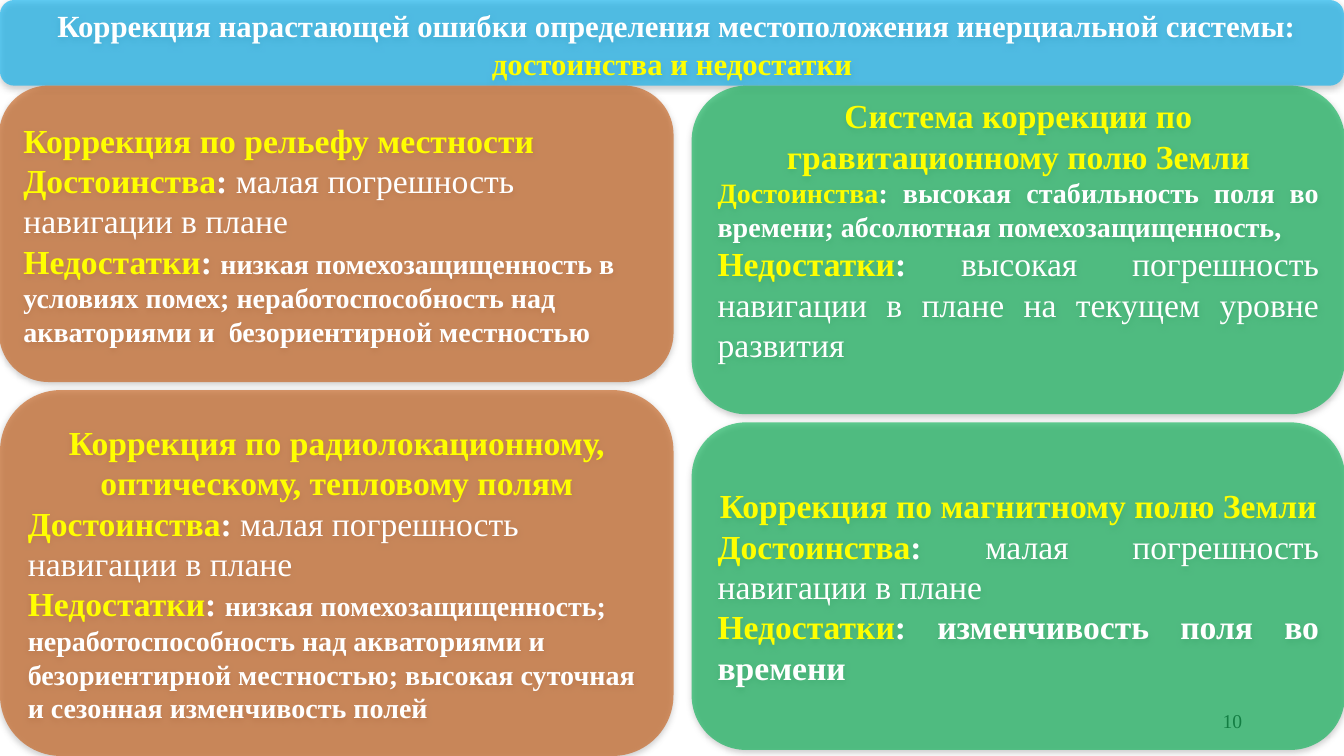
from lxml import etree
from pptx import Presentation
from pptx.dml.color import RGBColor
from pptx.enum.shapes import MSO_SHAPE
from pptx.enum.text import MSO_ANCHOR, PP_ALIGN
from pptx.oxml.ns import qn
from pptx.util import Inches, Pt

ROUNDED = MSO_SHAPE.ROUNDED_RECTANGLE
MIDDLE = MSO_ANCHOR.MIDDLE
LEFT, CENTER, RIGHT = PP_ALIGN.LEFT, PP_ALIGN.CENTER, PP_ALIGN.RIGHT
JUSTIFY = PP_ALIGN.JUSTIFY

WHITE = RGBColor(0xFF, 0xFF, 0xFF)
BLACK = RGBColor(0x00, 0x00, 0x00)
YELLOW = RGBColor(0xFF, 0xFF, 0x00)
BLUE = RGBColor(0x00, 0xB0, 0xF0)
ORANGE = RGBColor(0xC5, 0x5A, 0x11)
GREEN = RGBColor(0x00, 0xB0, 0x50)
SHADOW_GRAY = RGBColor(0x80, 0x80, 0x80)

PROS, CONS = "Достоинства", "Недостатки"
LOW_ERROR = "малая погрешность навигации в плане"


class SlideBuilder:
    """Holds the style and the current slide."""

    font = "Times New Roman"
    fill_alpha = 61
    shadow_alpha = 63

    def __init__(self, prs):
        self.slide = prs.slides.add_slide(prs.slide_layouts[6])

    def set_alpha(self, color, percent):
        etree.SubElement(color, qn("a:alpha")).set("val", str(percent * 1000))

    def add_shadow(self, s):
        s.shadow.inherit = False
        effects = s._element.spPr.find(qn("a:effectLst"))
        shadow = etree.SubElement(effects, qn("a:outerShdw"), {
            "blurRad": str(Pt(4.5)), "dist": str(Pt(1.5)),
            "dir": "5400000", "algn": "ctr", "rotWithShape": "0"})
        color = etree.SubElement(shadow, qn("a:srgbClr"), val=str(SHADOW_GRAY))
        self.set_alpha(color, self.shadow_alpha)

    def add_text(self, tf, paragraphs):
        """Each paragraph is (alignment, [(text, size, color, bold), ...])."""
        tf.word_wrap = True
        tf.vertical_anchor = MIDDLE
        for i, (align, runs) in enumerate(paragraphs):
            p = tf.add_paragraph() if i else tf.paragraphs[0]
            p.alignment = align
            for text, size, color, bold in runs:
                r = p.add_run()
                r.text = text
                r.font.name = self.font
                r.font.size = Pt(size)
                r.font.bold = bold
                r.font.color.rgb = color

    def panel(self, x, y, w, h, color, paragraphs):
        s = self.slide.shapes.add_shape(
            ROUNDED, Inches(x), Inches(y), Inches(w), Inches(h))
        s.fill.solid()
        s.fill.fore_color.rgb = color
        self.set_alpha(s._element.spPr.find(".//" + qn("a:srgbClr")),
                       self.fill_alpha)
        s.line.fill.background()
        self.add_shadow(s)
        self.add_text(s.text_frame, paragraphs)
        return s

    def label(self, x, y, w, h, paragraphs):
        s = self.slide.shapes.add_textbox(
            Inches(x), Inches(y), Inches(w), Inches(h))
        self.add_text(s.text_frame, paragraphs)


def heading(text, align=CENTER):
    return align, [(text, 24, YELLOW, True)]


def point(align, term, text, size=24, bold=False, term_size=24):
    """A yellow term, a white colon and the white text after it."""
    return align, [(term, term_size, YELLOW, True),
                   (": ", term_size, WHITE, True),
                   (text, size, WHITE, bold)]


def main():
    prs = Presentation()
    prs.slide_width, prs.slide_height = Inches(13.33), Inches(7.5)
    b = SlideBuilder(prs)

    # Title bar
    b.panel(0, 0, 13.33, 0.85, BLUE, [(CENTER, [
        (" ", 24, WHITE, True),
        ("Коррекция нарастающей ошибки определения местоположения "
         "инерциальной системы: ", 22, WHITE, True),
        ("достоинства и недостатки", 22, YELLOW, True)])])

    # Terrain correction
    b.panel(-0.01, 0.85, 6.69, 2.94, ORANGE, [
        heading("Коррекция по рельефу местности", JUSTIFY),
        point(LEFT, PROS, LOW_ERROR),
        point(LEFT, CONS, "низкая помехозащищенность в условиях помех; "
              "неработоспособность над акваториями и  безориентирной "
              "местностью", 20, True)])

    # Page number, seen through the green panel
    b.label(9.42, 6.95, 3, 0.4, [(RIGHT, [("10", 14, BLACK, False)])])

    # Gravity field correction, text raised above the middle
    gravity = b.panel(6.86, 0.85, 6.48, 3.26, GREEN, [
        heading("Система коррекции по гравитационному полю Земли"),
        point(JUSTIFY, PROS, "высокая стабильность поля во времени; "
              "абсолютная помехозащищенность,", 20, True, 20),
        point(JUSTIFY, CONS, "высокая погрешность навигации в плане "
              "на текущем уровне развития")])
    gravity.text_frame.margin_bottom = Inches(0.45)

    # Radar, optical and thermal field correction
    b.panel(0, 3.87, 6.68, 3.63, ORANGE, [
        heading("Коррекция по радиолокационному, оптическому, "
                "тепловому полям"),
        point(LEFT, PROS, LOW_ERROR),
        point(LEFT, CONS, "низкая помехозащищенность; неработоспособность "
              "над акваториями и безориентирной местностью; высокая "
              "суточная и сезонная изменчивость полей", 20, True)])

    # Magnetic field correction
    b.panel(6.86, 4.19, 6.48, 3.25, GREEN, [
        heading("Коррекция по магнитному полю Земли"),
        point(JUSTIFY, PROS, LOW_ERROR),
        point(JUSTIFY, CONS, "изменчивость поля во времени", bold=True)])

    prs.save("out.pptx")


if __name__ == "__main__":
    main()
